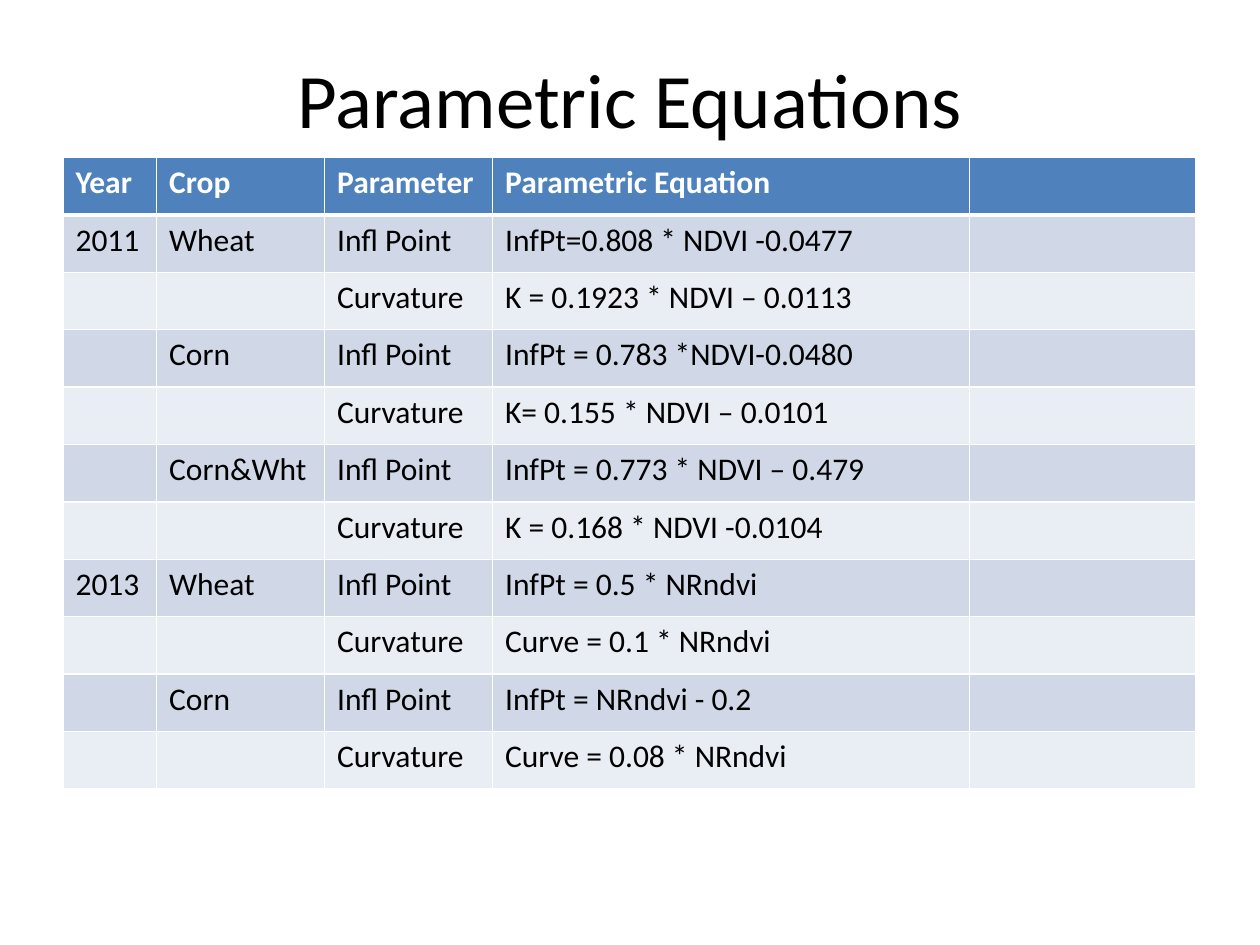
import pptx
import pptx.util
import pptx.dml.color
import pptx.enum.text
from dataclasses import dataclass
from lxml import etree

Pt = pptx.util.Pt
RGB = pptx.dml.color.RGBColor.from_string


@dataclass(frozen=True)
class Theme:
    font: str = "Calibri"
    title_size: int = 44
    table_size: int = 18
    text: str = "000000"
    light: str = "FFFFFF"
    header: str = "4F81BD"
    bands: tuple = ("D0D8E8", "E9EDF4")


theme = Theme()


def style_font(p, size, color, bold=False):
    p.font.name = theme.font
    p.font.size = Pt(size)
    p.font.bold = bold
    p.font.color.rgb = RGB(color)


def add_borders(cell, **widths):
    """Draw cell borders; widths maps L, R, T and B to points."""
    tcPr = cell._tc.get_or_add_tcPr()
    ns = tcPr.nsmap["a"]
    for side, width in widths.items():
        ln = etree.SubElement(tcPr, f"{{{ns}}}ln{side}", w=str(Pt(width)))
        fill = etree.SubElement(ln, f"{{{ns}}}solidFill")
        etree.SubElement(fill, f"{{{ns}}}srgbClr", val=theme.light)


prs = pptx.Presentation()
prs.slide_width, prs.slide_height = Pt(720), Pt(540)
s = prs.slides.add_slide(prs.slide_layouts[6])

# Title
title = s.shapes.add_textbox(Pt(36), Pt(21.6), Pt(648), Pt(68.4))
tf = title.text_frame
tf.word_wrap = True
tf.vertical_anchor = pptx.enum.text.MSO_ANCHOR.MIDDLE
p = tf.paragraphs[0]
p.text = "Parametric Equations"
p.alignment = pptx.enum.text.PP_ALIGN.CENTER
style_font(p, theme.title_size, theme.text)

# Equations table: each crop has an inflection point and a curvature
crops = [
    ("2011", "Wheat", "InfPt=0.808 * NDVI -0.0477", "K = 0.1923 * NDVI – 0.0113"),
    ("", "Corn", "InfPt = 0.783 *NDVI-0.0480", "K= 0.155 * NDVI – 0.0101"),
    ("", "Corn&Wht", "InfPt = 0.773 * NDVI – 0.479", "K = 0.168 * NDVI -0.0104"),
    ("2013", "Wheat", "InfPt = 0.5 * NRndvi", "Curve = 0.1 * NRndvi"),
    ("", "Corn", "InfPt = NRndvi - 0.2", "Curve = 0.08 * NRndvi"),
]
rows = [("Year", "Crop", "Parameter", "Parametric Equation", "")]
for year, crop, inflection, curvature in crops:
    rows.append((year, crop, "Infl Point", inflection, ""))
    rows.append(("", "", "Curvature", curvature, ""))

col_widths = [53.5, 96, 96, 272.5, 129.5]
row_height = 32.8
table = s.shapes.add_table(len(rows), len(col_widths), Pt(36), Pt(90),
                           Pt(sum(col_widths)), Pt(row_height * len(rows))).table
for column, width in zip(table.columns, col_widths):
    column.width = Pt(width)

for i, row in enumerate(rows):
    table.rows[i].height = Pt(row_height)
    is_header = i == 0
    for j, text in enumerate(row):
        cell = table.cell(i, j)
        add_borders(cell, L=1, R=1, T=3 if i == 1 else 1, B=3 if is_header else 1)
        cell.fill.solid()
        cell.fill.fore_color.rgb = RGB(theme.header if is_header else theme.bands[(i - 1) % 2])
        p = cell.text_frame.paragraphs[0]
        p.text = text
        style_font(p, theme.table_size, theme.light if is_header else theme.text, is_header)

prs.save("out.pptx")
